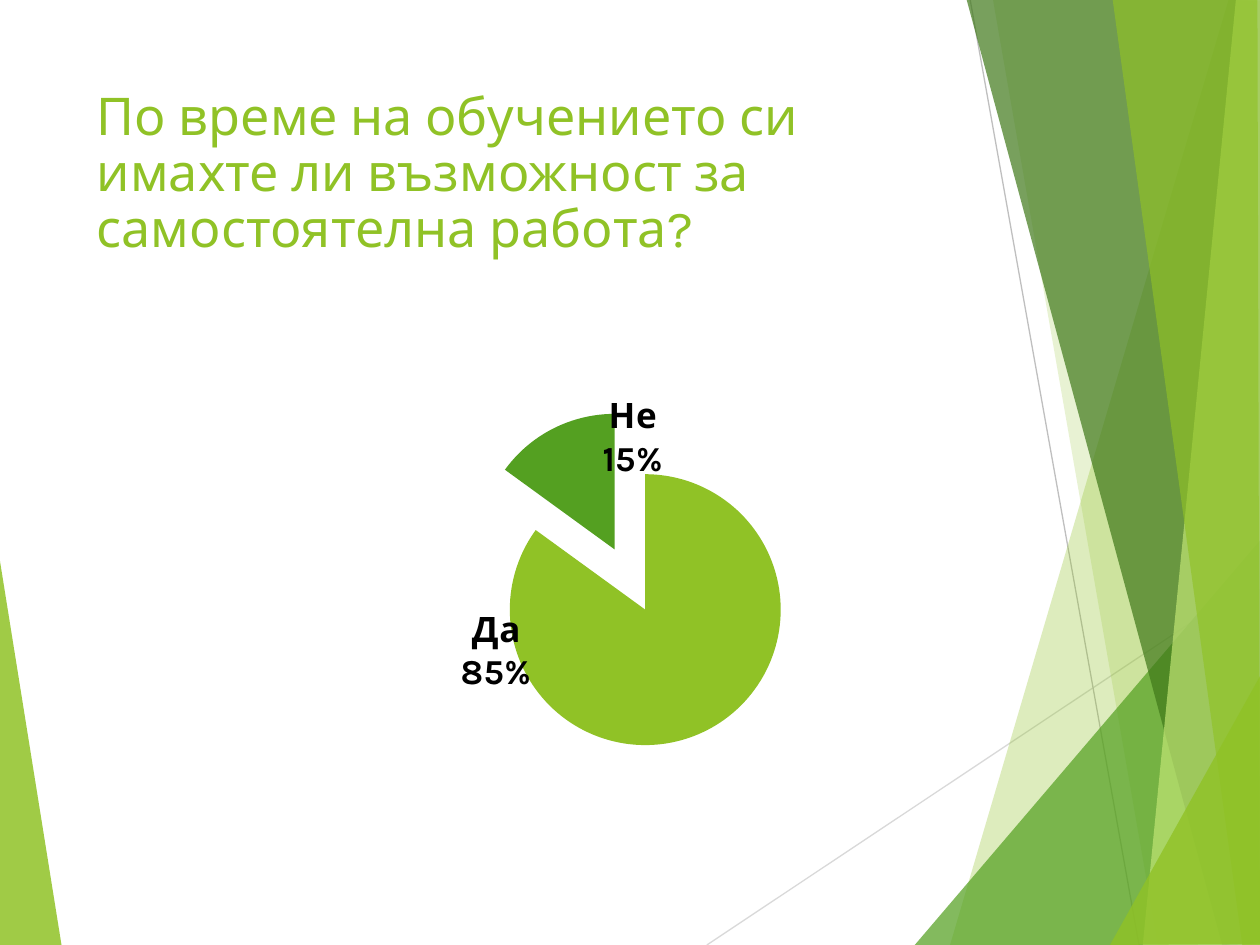
from dataclasses import dataclass

from lxml import etree
from pptx import Presentation
from pptx.chart import data as chart_data
from pptx.dml.color import RGBColor
from pptx.enum import chart as chart_enum, shapes, text
from pptx.oxml import ns, parse_xml
from pptx.util import Inches, Pt


@dataclass(frozen=True)
class Theme:
    font: str = "Karla"
    lime: str = "90C226"
    green: str = "54A021"
    forest: str = "3F7819"
    pale: str = "C0E474"
    black: str = "000000"
    light_gray: str = "D9D9D9"
    gray: str = "BFBFBF"
    title_size: float = 29.7
    chart_size: float = 10
    label_size: float = 20
    line_width: float = 0.75


THEME = Theme()
TITLE = "По време на обучението си имахте ли възможност за самостоятелна работа?"
LINES = [
    ((5.61, 7.5), (10.01, 4.57), THEME.light_gray),
    ((7.7, 0), (9.04, 7.5), THEME.gray),
]
LEFT_FACET = ([(-0.01, 4.39), (0.49, 7.51), (-0.01, 7.5)], THEME.lime, 85)
RIGHT_FACETS = [
    ([(9.75, 0), (7.54, 7.5), (10.02, 7.51), (10.01, 0.01)], THEME.lime, 30),
    ([(7.88, -0.01), (9.19, 7.5), (10.01, 7.5), (10.01, -0.01)], THEME.lime, 20),
    ([(7.26, 7.5), (10, 4.29), (10.01, 7.5)], THEME.green, 72),
    ([(7.67, -0.01), (9.7, 7.5), (10.01, 7.49), (10.01, -0.01)], THEME.forest, 70),
    ([(9.81, -0.01), (9.07, 7.5), (10.01, 7.5), (10, -0.01)], THEME.pale, 70),
    ([(8.83, -0.01), (9.86, 7.5), (10, 7.5), (9.98, -0.01)], THEME.lime, 65),
    ([(8.81, 7.5), (10.01, 5.35), (10.01, 7.49)], THEME.lime, 80),
]
ANSWERS = [
    ("Да", 85, THEME.lime, (-0.22, -0.24)),
    ("Не", 15, THEME.green, (0.1, 0.11)),
]
EXPLOSION = 25


def rgb(color):
    return RGBColor.from_string(color)


def style_font(font, size, color, bold=False):
    font.name = THEME.font
    font.size = Pt(size)
    font.bold = bold
    font.color.rgb = rgb(color)


def add_facet(page, points, color, opacity):
    corners = [(Inches(x), Inches(y)) for x, y in points]
    builder = page.shapes.build_freeform(*corners[0])
    builder.add_line_segments(corners[1:], close=True)
    facet = builder.convert_to_shape()
    facet.shadow.inherit = False
    facet.line.fill.background()
    facet.fill.solid()
    facet.fill.fore_color.rgb = rgb(color)
    fill_color = facet._element.spPr.find(".//" + ns.qn("a:srgbClr"))
    etree.SubElement(fill_color, ns.qn("a:alpha"), val=str(opacity * 1000))


def add_line(page, start, end, color):
    ends = [Inches(value) for value in (*start, *end)]
    line = page.shapes.add_connector(shapes.MSO_CONNECTOR.STRAIGHT, *ends)
    line.line.color.rgb = rgb(color)
    line.line.width = Pt(THEME.line_width)
    etree.SubElement(line._element.spPr, ns.qn("a:effectLst"))


def add_title(page):
    box = page.shapes.add_textbox(Inches(0.67), Inches(0.67), Inches(6.94), Inches(1.44))
    frame = box.text_frame
    frame.word_wrap = True
    frame.vertical_anchor = text.MSO_ANCHOR.TOP
    frame.text = TITLE
    para = frame.paragraphs[0]
    para.line_spacing = 0.9
    style_font(para.runs[0].font, THEME.title_size, THEME.lime)


def chart_xml(content):
    return parse_xml(content.replace(">", f' {ns.nsdecls("c")}>', 1))


def layout_xml(**values):
    parts = "".join(f'<c:{name} val="{value}"/>' for name, value in values.items())
    return chart_xml(f"<c:layout><c:manualLayout>{parts}</c:manualLayout></c:layout>")


def set_label_content(label):
    shown = {"showCatName": "1", "showPercent": "1"}
    for name in ("showLegendKey", "showVal", "showCatName", "showSerName", "showPercent", "showBubbleSize"):
        flag = label.find(ns.qn(f"c:{name}"))
        if flag is not None:
            flag.set("val", shown.get(name, "0"))
    last_flag = label.find(ns.qn("c:showBubbleSize"))
    if last_flag is None:
        last_flag = label.find(ns.qn("c:showPercent"))
    last_flag.addnext(chart_xml("<c:separator>\n</c:separator>"))


def add_pie(page):
    content = chart_data.CategoryChartData()
    content.categories = [answer[0] for answer in ANSWERS]
    content.add_series("Series 1", [answer[1] for answer in ANSWERS])
    frame = page.shapes.add_chart(
        chart_enum.XL_CHART_TYPE.PIE, Inches(0.5), Inches(2.5), Inches(9), Inches(4.2), content
    )
    pie = frame.chart
    pie.has_legend = False
    pie.has_title = False
    style_font(pie.font, THEME.chart_size, THEME.black)
    plot = pie.plots[0]
    plot.vary_by_categories = True
    series = plot.series[0]
    labels = series.data_labels
    labels.number_format = "0%"
    labels.number_format_is_linked = False
    style_font(labels.font, THEME.label_size, THEME.black, bold=True)
    set_label_content(labels._element)

    for index, (_, _, color, (shift_x, shift_y)) in enumerate(ANSWERS):
        point = series.points[index]
        point.format.fill.solid()
        point.format.fill.fore_color.rgb = rgb(color)
        point.format.line.fill.background()
        style_font(point.data_label.font, THEME.label_size, THEME.black, bold=True)
        point.data_label.position = chart_enum.XL_LABEL_POSITION.OUTSIDE_END
        label = series._element.findall(".//" + ns.qn("c:dLbl"))[index]
        set_label_content(label)
        place = layout_xml(x=shift_x, y=shift_y)
        label.find(ns.qn("c:idx")).addnext(place)
        place.addnext(chart_xml('<c:numFmt formatCode="0%" sourceLinked="0"></c:numFmt>'))

    first_point = series._element.find(ns.qn("c:dPt"))
    first_point.addprevious(chart_xml(f'<c:explosion val="{EXPLOSION}"></c:explosion>'))
    area = pie._chartSpace.find(".//" + ns.qn("c:plotArea"))
    for old in area.findall(ns.qn("c:layout")):
        area.remove(old)
    area.insert(0, layout_xml(
        layoutTarget="inner", xMode="edge", yMode="edge", x=0.35, y=0.18, w=0.3, h=0.64
    ))


def main():
    deck = Presentation()
    deck.slide_width = Inches(10)
    deck.slide_height = Inches(7.5)
    page = deck.slides.add_slide(deck.slide_layouts[6])
    add_facet(page, *LEFT_FACET)
    for line in LINES:
        add_line(page, *line)
    for facet in RIGHT_FACETS:
        add_facet(page, *facet)
    add_title(page)
    add_pie(page)
    deck.save("out.pptx")


if __name__ == "__main__":
    main()
